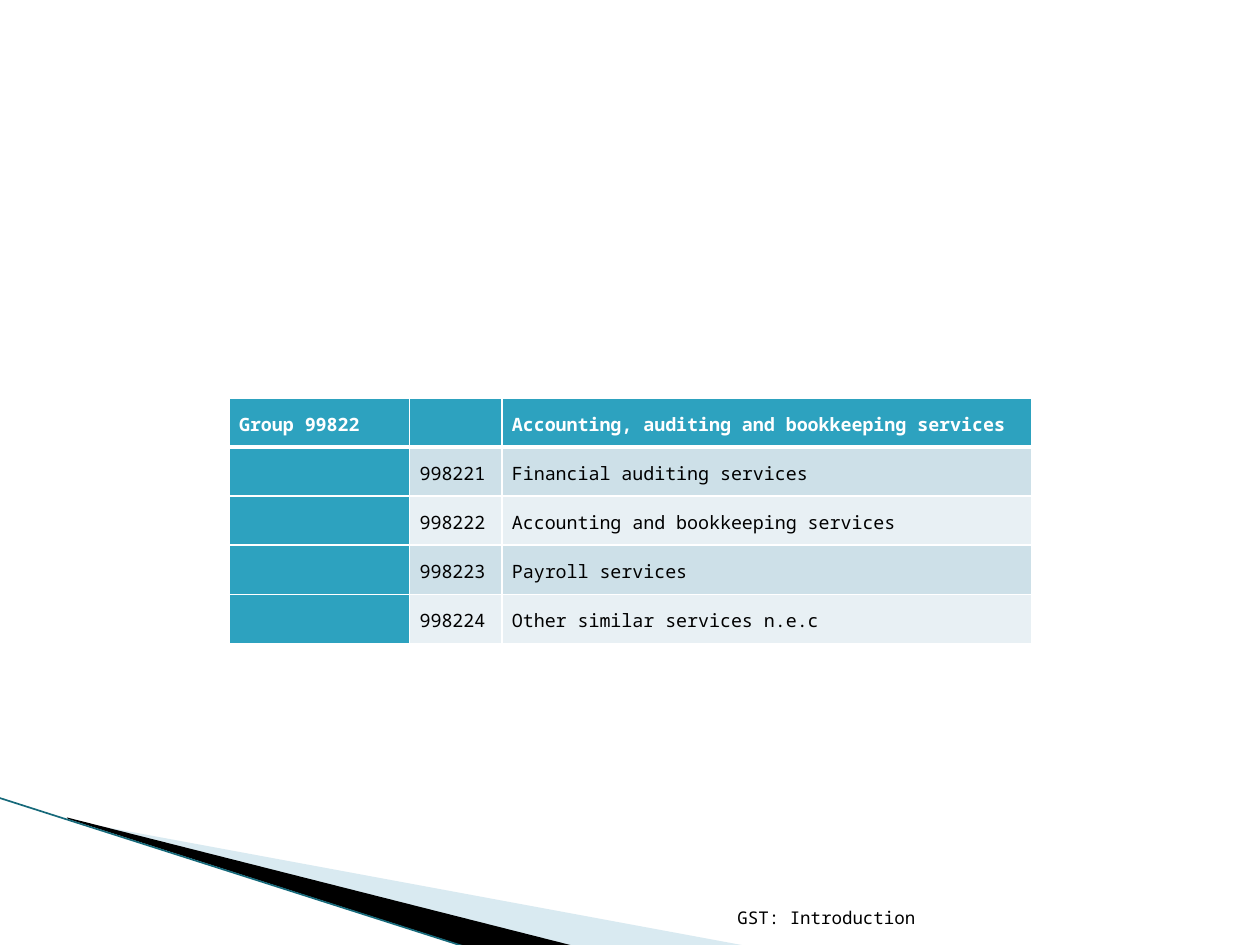
import pptx
import pptx.dml.color
import pptx.enum.text
import pptx.oxml
import pptx.oxml.ns
import pptx.util

Cm = pptx.util.Cm
Pt = pptx.util.Pt

FONT = "Noto Sans Mono"
COLORS = {
    "white": "FFFFFF",
    "black": "000000",
    "teal": "2DA2BF",
    "dark_teal": "16697A",
    "pale_blue": "A0CBDC",
    "band_dark": "CDE0E8",
    "band_light": "E8F0F4",
}
ROWS = [
    ("Group 99822", "", "Accounting, auditing and bookkeeping services"),
    ("", "998221", "Financial auditing services"),
    ("", "998222", "Accounting and bookkeeping services"),
    ("", "998223", "Payroll services"),
    ("", "998224", "Other similar services n.e.c"),
]
COLUMN_WIDTHS = (3.64, 1.86, 10.67)
ROW_HEIGHT = 0.99
TABLE_LEFT, TABLE_TOP = 4.62, 8.02
FOOTER = "GST: Introduction"
WEDGES = [
    ("pale_blue", 40, [(1.4, 16.54), (15.11, 19.08), (11.58, 19.08), (1.4, 16.51)]),
    ("black", 100, [(1.35, 16.48), (11.61, 19.08), (9.45, 19.1), (1.37, 16.51)]),
]
EDGE = (-0.03, 16.08, 9.42, 19.1)


def color(name):
    return pptx.dml.color.RGBColor.from_string(COLORS[name])


def paint(fill, name):
    fill.solid()
    fill.fore_color.rgb = color(name)


def set_font(para, size, name, bold=False):
    para.font.name = FONT
    para.font.size = Pt(size)
    para.font.bold = bold
    para.font.color.rgb = color(name)


def add_wedge(page, name, opacity, points):
    corners = [(Cm(x), Cm(y)) for x, y in points]
    builder = page.shapes.build_freeform(*corners[0], scale=1.0)
    builder.add_line_segments(corners[1:], close=True)
    wedge = builder.convert_to_shape()
    wedge.shadow.inherit = False
    wedge.line.fill.background()
    paint(wedge.fill, name)
    if opacity < 100:
        tint = wedge.fill._xPr.find(".//" + pptx.oxml.ns.qn("a:srgbClr"))
        alpha = pptx.oxml.parse_xml(
            f'<a:alpha {pptx.oxml.ns.nsdecls("a")} val="{opacity * 1000}"/>')
        tint.append(alpha)


def add_edge(page):
    edge = page.shapes.add_connector(
        pptx.enum.shapes.MSO_CONNECTOR.STRAIGHT, *map(Cm, EDGE))
    edge.line.width = Pt(0.95)
    edge.line.color.rgb = color("dark_teal")
    edge._element.spPr.append(
        pptx.oxml.parse_xml(f'<a:effectLst {pptx.oxml.ns.nsdecls("a")}/>'))


def set_borders(cell, row):
    widths = {"L": 1, "R": 1, "T": 3 if row == 1 else 1, "B": 3 if row == 0 else 1}
    properties = cell._tc.get_or_add_tcPr()
    for side, width in widths.items():
        properties.append(pptx.oxml.parse_xml(
            f'<a:ln{side} {pptx.oxml.ns.nsdecls("a")} w="{Pt(width)}"><a:solidFill>'
            f'<a:srgbClr val="{COLORS["white"]}"/></a:solidFill></a:ln{side}>'))


def add_services_table(page):
    table = page.shapes.add_table(
        len(ROWS), len(COLUMN_WIDTHS), Cm(TABLE_LEFT), Cm(TABLE_TOP),
        Cm(sum(COLUMN_WIDTHS)), Cm(ROW_HEIGHT * len(ROWS))).table
    for column, width in zip(table.columns, COLUMN_WIDTHS):
        column.width = Cm(width)
    for row, texts in enumerate(ROWS):
        table.rows[row].height = Cm(ROW_HEIGHT)
        band = "band_dark" if row % 2 else "band_light"
        for col, text in enumerate(texts):
            cell = table.cell(row, col)
            heading = row == 0 or col == 0
            set_borders(cell, row)
            paint(cell.fill, "teal" if heading else band)
            cell.margin_left = cell.margin_right = Cm(0.2)
            cell.margin_top = cell.margin_bottom = Cm(0.2)
            cell.text = text
            para = cell.text_frame.paragraphs[0]
            para.line_spacing = 1.15
            set_font(para, 10.5, "white" if heading else "black", heading)


def add_footer(page):
    box = page.shapes.add_textbox(Cm(12.17), Cm(17.81), Cm(6.53), Cm(1.02))
    frame = box.text_frame
    frame.word_wrap = True
    frame.vertical_anchor = pptx.enum.text.MSO_ANCHOR.BOTTOM
    para = frame.paragraphs[0]
    para.text = FOOTER
    para.alignment = pptx.enum.text.PP_ALIGN.RIGHT
    set_font(para, 10, "black")


def main():
    deck = pptx.Presentation()
    deck.slide_width, deck.slide_height = Cm(25.4), Cm(19.05)
    page = deck.slides.add_slide(deck.slide_layouts[6])
    paint(page.background.fill, "white")
    for wedge in WEDGES:
        add_wedge(page, *wedge)
    add_edge(page)
    add_services_table(page)
    add_footer(page)
    deck.save("out.pptx")


if __name__ == "__main__":
    main()
